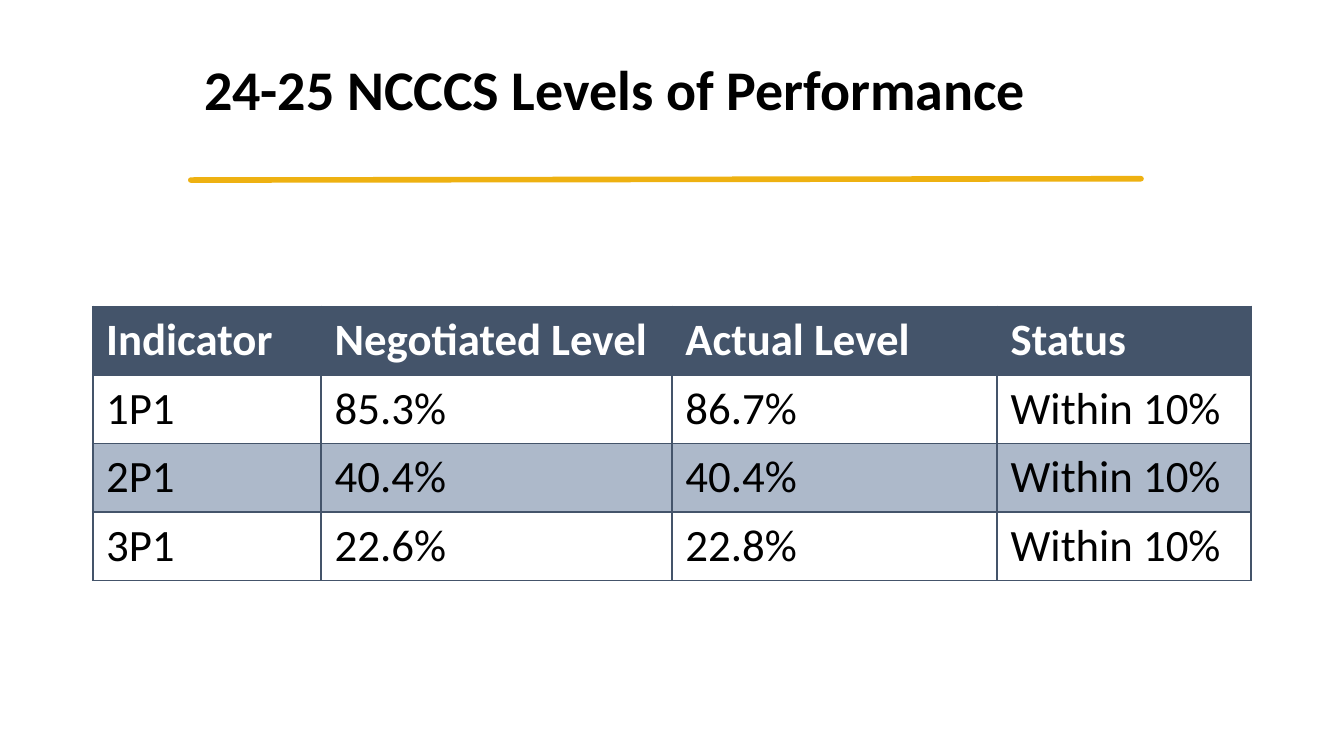
from typing import NamedTuple

import pptx
import pptx.dml.color
import pptx.enum.shapes
import pptx.enum.text
import pptx.oxml.ns
import pptx.util
from lxml import etree

RGBColor = pptx.dml.color.RGBColor
Inches = pptx.util.Inches
Pt = pptx.util.Pt
qn = pptx.oxml.ns.qn

BLACK = RGBColor(0x00, 0x00, 0x00)
WHITE = RGBColor(0xFF, 0xFF, 0xFF)
SLATE = RGBColor(0x44, 0x54, 0x6A)
BAND = RGBColor(0xAD, 0xB9, 0xCA)
GOLD = RGBColor(0xEE, 0xB1, 0x11)

WIDTH = Inches(10)
HEIGHT = WIDTH * 9 // 16
MARGIN = Inches(1.42)
COLUMN_WIDTHS = (1.7, 2.61, 2.42, 1.89)
ROW_HEIGHT = Inches(0.51)


class Level(NamedTuple):
    indicator: str
    negotiated: str
    actual: str
    status: str


HEADER = Level("Indicator", "Negotiated Level", "Actual Level", "Status")
LEVELS = (
    Level("1P1", "85.3%", "86.7%", "Within 10%"),
    Level("2P1", "40.4%", "40.4%", "Within 10%"),
    Level("3P1", "22.6%", "22.8%", "Within 10%"),
)


def write(tf, text: str, *, size: float, color: RGBColor = BLACK,
          bold: bool = False, spacing: float = 1.0) -> None:
    p = tf.paragraphs[0]
    p.line_spacing = spacing
    r = p.add_run()
    r.text = text
    r.font.name = "Calibri"
    r.font.size = Pt(size)
    r.font.bold = bold
    r.font.color.rgb = color


def add_title(slide, text: str) -> None:
    box = slide.shapes.add_textbox(MARGIN, Inches(0.14), Inches(8.05), Inches(1.09))
    tf = box.text_frame
    tf.word_wrap = True
    tf.vertical_anchor = pptx.enum.text.MSO_ANCHOR.MIDDLE
    write(tf, text, size=30, bold=True, spacing=0.9)


def add_rule(slide) -> None:
    rule = slide.shapes.add_connector(
        pptx.enum.shapes.MSO_CONNECTOR.STRAIGHT,
        MARGIN, Inches(1.34), Inches(8.49), Inches(1.33))
    rule.line.color.rgb = GOLD
    rule.line.width = Pt(3)
    rule.line._get_or_add_ln().set("cap", "rnd")
    etree.SubElement(rule._element.spPr, qn("a:effectLst"))


def set_borders(cell, color: RGBColor, width: float) -> None:
    """Outline all four sides; borders must precede the fill in the XML."""
    tc_pr = cell._tc.get_or_add_tcPr()
    for i, side in enumerate(("a:lnL", "a:lnR", "a:lnT", "a:lnB")):
        ln = etree.Element(qn(side), w=str(Pt(width)))
        fill = etree.SubElement(ln, qn("a:solidFill"))
        etree.SubElement(fill, qn("a:srgbClr"), val=str(color))
        tc_pr.insert(i, ln)


def add_levels_table(slide) -> None:
    rows = (HEADER, *LEVELS)
    table = slide.shapes.add_table(
        len(rows), len(COLUMN_WIDTHS), Inches(0.69), Inches(2.28),
        Inches(sum(COLUMN_WIDTHS)), ROW_HEIGHT * len(rows)).table
    table.horz_banding = False
    for column, width in zip(table.columns, COLUMN_WIDTHS):
        column.width = Inches(width)
    for i, level in enumerate(rows):
        is_header = i == 0
        fill = SLATE if is_header else WHITE if i % 2 else BAND
        for j, text in enumerate(level):
            cell = table.cell(i, j)
            cell.fill.solid()
            cell.fill.fore_color.rgb = fill
            set_borders(cell, SLATE, 1)
            write(cell.text_frame, text, size=24, bold=is_header,
                  color=WHITE if is_header else BLACK)


def main() -> None:
    prs = pptx.Presentation()
    prs.slide_width, prs.slide_height = WIDTH, HEIGHT
    slide = prs.slides.add_slide(prs.slide_layouts[6])
    add_rule(slide)
    add_title(slide, "24-25 NCCCS Levels of Performance")
    add_levels_table(slide)
    prs.save("out.pptx")


if __name__ == "__main__":
    main()
